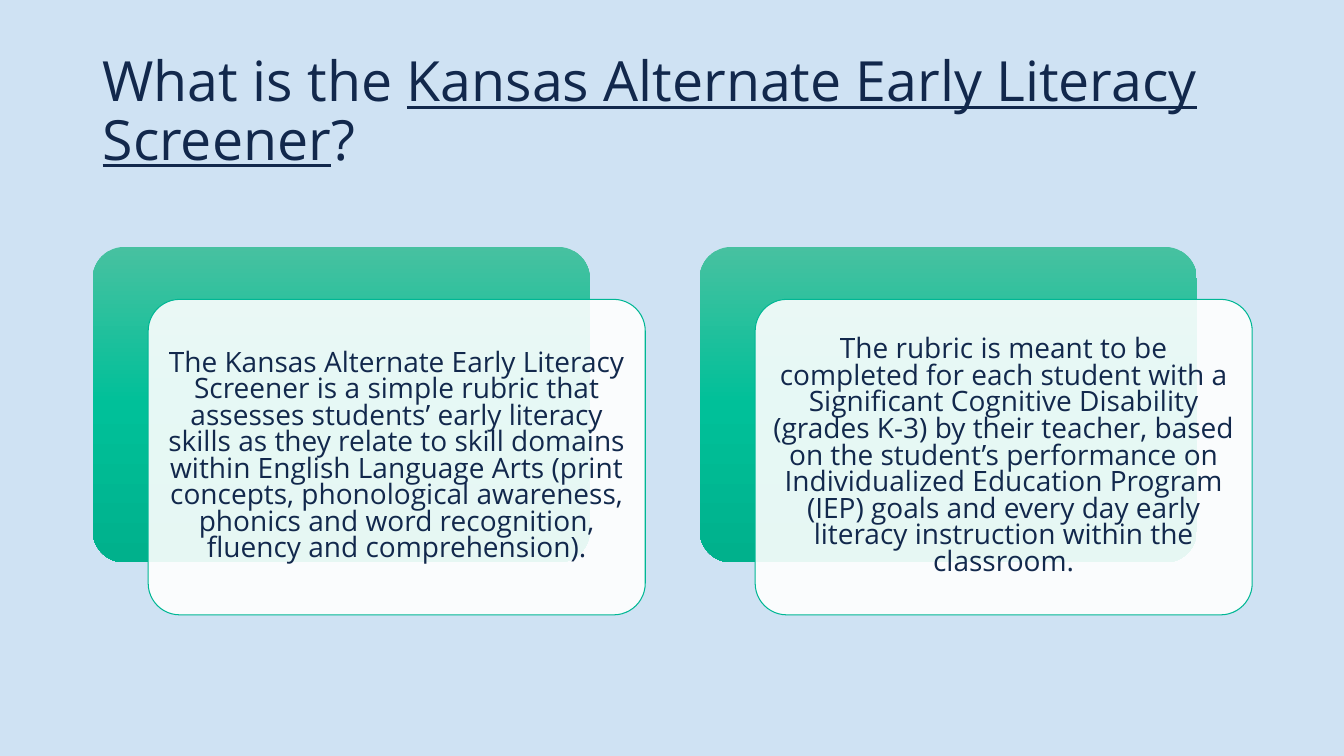
from copy import deepcopy

from lxml.etree import SubElement
from pptx import Presentation
from pptx.dml.color import RGBColor
from pptx.enum.shapes import MSO_SHAPE as Shape
from pptx.enum.text import MSO_ANCHOR as Anchor, PP_ALIGN as Align
from pptx.oxml.ns import qn
from pptx.util import Inches, Pt

SKY = RGBColor(0xCF, 0xE2, 0xF3)
NAVY = RGBColor(0x12, 0x28, 0x4C)
WHITE = RGBColor(0xFF, 0xFF, 0xFF)
EDGE = RGBColor(0x00, 0xB7, 0x94)
GREENS = (
    RGBColor(0x47, 0xC1, 0xA0),
    RGBColor(0x00, 0xC0, 0x99),
    RGBColor(0x00, 0xB1, 0x8C),
)

CARDS = (
    "The Kansas Alternate Early Literacy Screener is a simple rubric that "
    "assesses students’ early literacy skills as they relate to skill domains "
    "within English Language Arts (print concepts, phonological awareness, "
    "phonics and word recognition, fluency and comprehension).",
    "The rubric is meant to be completed for each student with a Significant "
    "Cognitive Disability (grades K-3) by their teacher, based on the "
    "student’s performance on Individualized Education Program (IEP) goals "
    "and every day early literacy instruction within the classroom.",
)


class Deck:
    """Holds the text style and the current slide."""

    font = "Open Sans"
    ink = NAVY

    def __init__(self):
        self.prs = Presentation()
        self.prs.slide_width = Inches(13.33)
        self.prs.slide_height = Inches(7.5)
        self.slide = self.prs.slides.add_slide(self.prs.slide_layouts[6])
        back = self.slide.background.fill
        back.solid()
        back.fore_color.rgb = SKY

    def label(self, frame, runs, size, space, align, pad):
        frame.word_wrap = True
        frame.vertical_anchor = Anchor.MIDDLE
        frame.margin_left = frame.margin_right = Inches(pad[0])
        frame.margin_top = frame.margin_bottom = Inches(pad[1])
        para = frame.paragraphs[0]
        para.alignment = align
        para.line_spacing = space
        for text, under in runs:
            run = para.add_run()
            run.text = text
            run.font.name = self.font
            run.font.size = Pt(size)
            run.font.color.rgb = self.ink
            run.font.underline = under

    def title(self, box, runs):
        shape = self.slide.shapes.add_textbox(*map(Inches, box))
        self.label(shape.text_frame, runs, 39.6, 0.88, Align.LEFT, (0.1, 0.05))

    def panel(self, box):
        shape = self.slide.shapes.add_shape(
            Shape.ROUNDED_RECTANGLE, *map(Inches, box))
        shape.adjustments[0] = 0.1
        shape.shadow.inherit = False
        return shape

    def blend(self, box):
        shape = self.panel(box)
        shape.line.fill.background()
        fill = shape.fill
        fill.gradient()
        fill.gradient_angle = 270
        stops = shape.element.spPr.find(qn("a:gradFill")).find(qn("a:gsLst"))
        stops.insert(1, deepcopy(stops[0]))
        for i, (stop, tone) in enumerate(zip(fill.gradient_stops, GREENS)):
            stop.position = i / 2
            stop.color.rgb = tone

    def card(self, box, text):
        shape = self.panel(box)
        shape.fill.solid()
        shape.fill.fore_color.rgb = WHITE
        tone = shape.element.spPr.find(qn("a:solidFill"))[0]
        SubElement(tone, qn("a:alpha")).set("val", "90000")
        shape.line.color.rgb = EDGE
        shape.line.width = Pt(0.75)
        self.label(shape.text_frame, [(text, False)], 20, 0.79,
                   Align.CENTER, (0.08, 0.08))


def main():
    deck = Deck()
    deck.title((0.92, 0.4, 11.5, 1.45), (
        ("What is the ", False),
        ("Kansas Alternate Early Literacy Screener", True),
        ("?", False),
    ))
    left, top, wide, high = 0.92, 2.45, 4.93, 3.13
    for i, text in enumerate(CARDS):
        x = left + i * 6.02
        deck.blend((x, top, wide, high))
        deck.card((x + 0.55, top + 0.52, wide, high), text)
    deck.prs.save("out.pptx")


if __name__ == "__main__":
    main()
